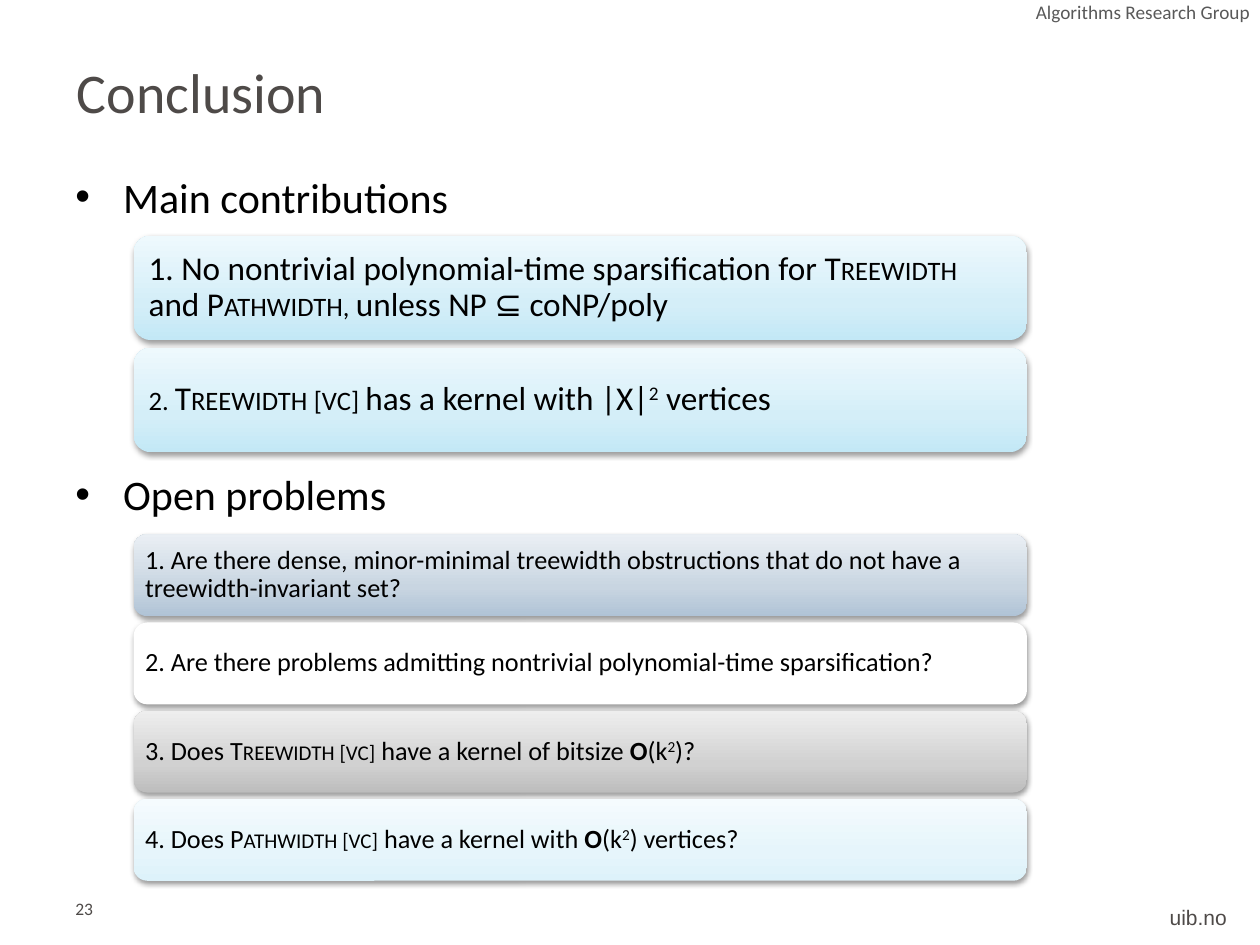
from dataclasses import dataclass

from lxml.etree import SubElement
from pptx import Presentation
from pptx.dml.color import RGBColor
from pptx.enum.shapes import MSO_SHAPE
from pptx.enum.text import MSO_ANCHOR, PP_ALIGN
from pptx.oxml import parse_xml
from pptx.oxml.ns import nsdecls, qn
from pptx.util import Inches, Pt


@dataclass(frozen=True)
class Theme:
    font: str = "Calibri"
    address_font: str = "Arial"
    ink: str = "000000"
    brown: str = "4E4A48"
    grey: str = "595959"
    title: int = 32
    heading: int = 24
    contribution: int = 19
    problem: int = 15
    group: int = 11
    number: int = 10
    address: int = 12
    # Card fills run from bottom to top
    sky: tuple = ("C3E8F6", "D4EEF8", "EEF9FD")
    steel: tuple = ("B0C3D6", "C8D5E1", "EAEFF4")
    white: tuple = ("FFFFFF",)
    silver: tuple = ("BDBDBD", "D1D1D1", "EEEEEE")
    ice: tuple = ("DDF2FA", "E6F5FB", "F5FBFE")


THEME = Theme()
SMALL = {"cap": "small"}
BOLD = {"b": "1"}
RAISED = {"baseline": "30000"}

CONTRIBUTIONS = [
    (THEME.sky, [("1. No nontrivial polynomial-time sparsification for ", {}),
                 ("Treewidth", SMALL), (" and ", {}), ("Pathwidth, ", SMALL),
                 ("unless NP ⊆ coNP/poly", {})]),
    (THEME.sky, [("2. Treewidth [vc] ", SMALL), ("has a kernel with |X|", {}),
                 ("2", RAISED), (" vertices", {})]),
]
PROBLEMS = [
    (THEME.steel, [("1. Are there dense, minor-minimal treewidth obstructions "
                    "that do not have a treewidth-invariant set?", {})]),
    (THEME.white, [("2. Are there problems admitting nontrivial "
                    "polynomial-time sparsification?", {})]),
    (THEME.silver, [("3. Does ", {}), ("Treewidth [vc]", SMALL),
                    (" have a kernel of bitsize ", {}), ("O", BOLD),
                    ("(k", {}), ("2", RAISED), (")?", {})]),
    (THEME.ice, [("4. Does ", {}), ("Pathwidth [vc]", SMALL),
                 (" have a kernel with ", {}), ("O", BOLD),
                 ("(k", {}), ("2", RAISED), (") vertices?", {})]),
]


def set_all(target, values):
    for name, value in values.items():
        setattr(target, name, value)


def place(shape, box):
    set_all(shape, dict(zip(("left", "top", "width", "height"), map(Inches, box))))


def add_spans(para, spans, size, color, font=THEME.font):
    for text, marks in spans:
        span = para.add_run()
        span.text = text
        set_all(span.font, {"name": font, "size": Pt(size)})
        span.font.color.rgb = RGBColor.from_string(color)
        for name, value in marks.items():
            span._r.get_or_add_rPr().set(name, value)


def add_label(page, box, text, size, color, font=THEME.font,
              align=PP_ALIGN.LEFT, **frame_format):
    label = page.shapes.add_textbox(*map(Inches, box))
    set_all(label.text_frame, {"word_wrap": True, **frame_format})
    para = label.text_frame.paragraphs[0]
    para.alignment = align
    add_spans(para, [(text, {})], size, color, font)
    return para


def add_title(page, box, text):
    title = page.shapes.title
    place(title, box)
    title.text_frame.vertical_anchor = MSO_ANCHOR.MIDDLE
    para = title.text_frame.paragraphs[0]
    para.alignment = PP_ALIGN.LEFT
    add_spans(para, [(text, {})], THEME.title, THEME.brown)


def add_heading(page, box, text):
    para = add_label(page, box, text, THEME.heading, THEME.ink)
    properties = para._p.get_or_add_pPr()
    properties.set("marL", str(Inches(0.38)))
    properties.set("indent", str(Inches(-0.38)))
    SubElement(properties, qn("a:buFont"), typeface="Arial")
    SubElement(properties, qn("a:buChar"), char="•")


def paint_card(card, colors):
    card.shadow.inherit = False
    card.line.fill.background()
    if len(colors) == 1:
        card.fill.solid()
        card.fill.fore_color.rgb = RGBColor.from_string(colors[0])
    else:
        stops = "".join(
            f'<a:gs pos="{position}"><a:srgbClr val="{color}"/></a:gs>'
            for position, color in zip((0, 35000, 100000), colors))
        gradient = parse_xml(
            f'<a:gradFill {nsdecls("a")} rotWithShape="1"><a:gsLst>{stops}</a:gsLst>'
            '<a:lin ang="16200000" scaled="0"/></a:gradFill>')
        card._element.spPr.find(qn("a:prstGeom")).addnext(gradient)
    # Soft shadow below the card
    effects = card._element.spPr.find(qn("a:effectLst"))
    effects.append(parse_xml(
        f'<a:outerShdw {nsdecls("a")} blurRad="{Pt(3.1)}" dist="{Pt(1.6)}" '
        'dir="5400000" rotWithShape="0"><a:srgbClr val="000000">'
        '<a:alpha val="38000"/></a:srgbClr></a:outerShdw>'))


def add_cards(page, box, cards, gap, inset, size):
    left, top, width, height = box
    card_height = (height - gap * (len(cards) - 1)) / len(cards)
    for index, (colors, spans) in enumerate(cards):
        card_top = top + index * (card_height + gap)
        card = page.shapes.add_shape(
            MSO_SHAPE.ROUNDED_RECTANGLE,
            *map(Inches, (left, card_top, width, card_height)))
        paint_card(card, colors)
        margins = {f"margin_{side}": Inches(inset)
                   for side in ("left", "top", "right", "bottom")}
        set_all(card.text_frame, {"word_wrap": True, **margins,
                                  "vertical_anchor": MSO_ANCHOR.MIDDLE})
        para = card.text_frame.paragraphs[0]
        set_all(para, {"alignment": PP_ALIGN.LEFT, "line_spacing": 0.9})
        add_spans(para, spans, size, THEME.ink)


def add_margins(page):
    add_label(page, (4.69, 0, 5.33, 0.2), "Algorithms Research Group",
              THEME.group, THEME.grey, align=PP_ALIGN.RIGHT,
              margin_top=0, margin_bottom=0)
    add_label(page, (0.5, 7.13, 2.14, 0.3), "23", THEME.number, THEME.brown,
              margin_top=0)
    add_label(page, (9.18, 7.13, 0.66, 0.3), "uib.no", THEME.address, THEME.brown,
              THEME.address_font, PP_ALIGN.CENTER, word_wrap=False)


def main():
    deck = Presentation()
    set_all(deck, {"slide_width": Inches(10), "slide_height": Inches(7.5)})
    page = deck.slides.add_slide(deck.slide_layouts[5])

    add_title(page, (0.51, 0.38, 9, 0.69), "Conclusion")
    add_margins(page)

    # Main contributions
    add_heading(page, (0.5, 1.31, 9, 0.94), "Main contributions")
    add_cards(page, (1.06, 1.87, 7.09, 1.72), CONTRIBUTIONS,
              0.06, 0.08, THEME.contribution)

    # Open problems
    add_heading(page, (0.5, 3.67, 9, 0.94), "Open problems")
    add_cards(page, (1.06, 4.24, 7.09, 2.75), PROBLEMS,
              0.05, 0.06, THEME.problem)

    deck.save("out.pptx")


if __name__ == "__main__":
    main()
